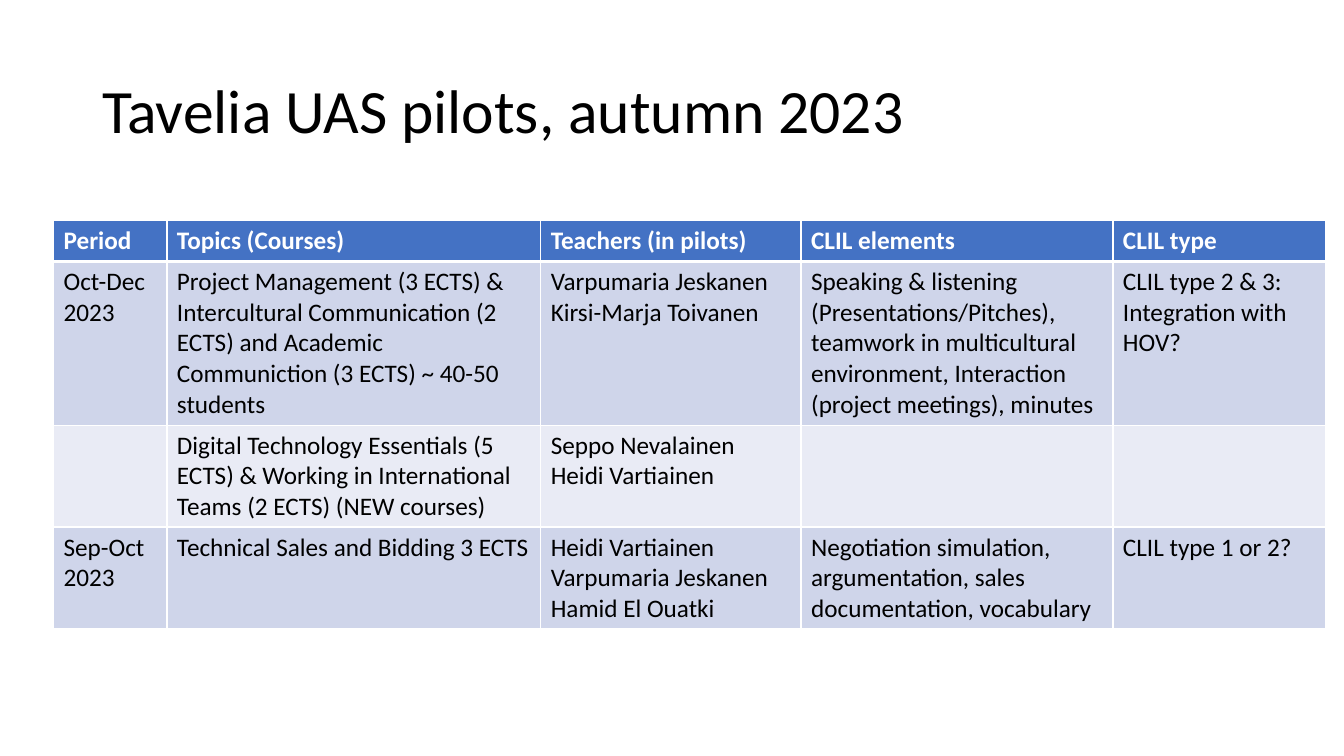
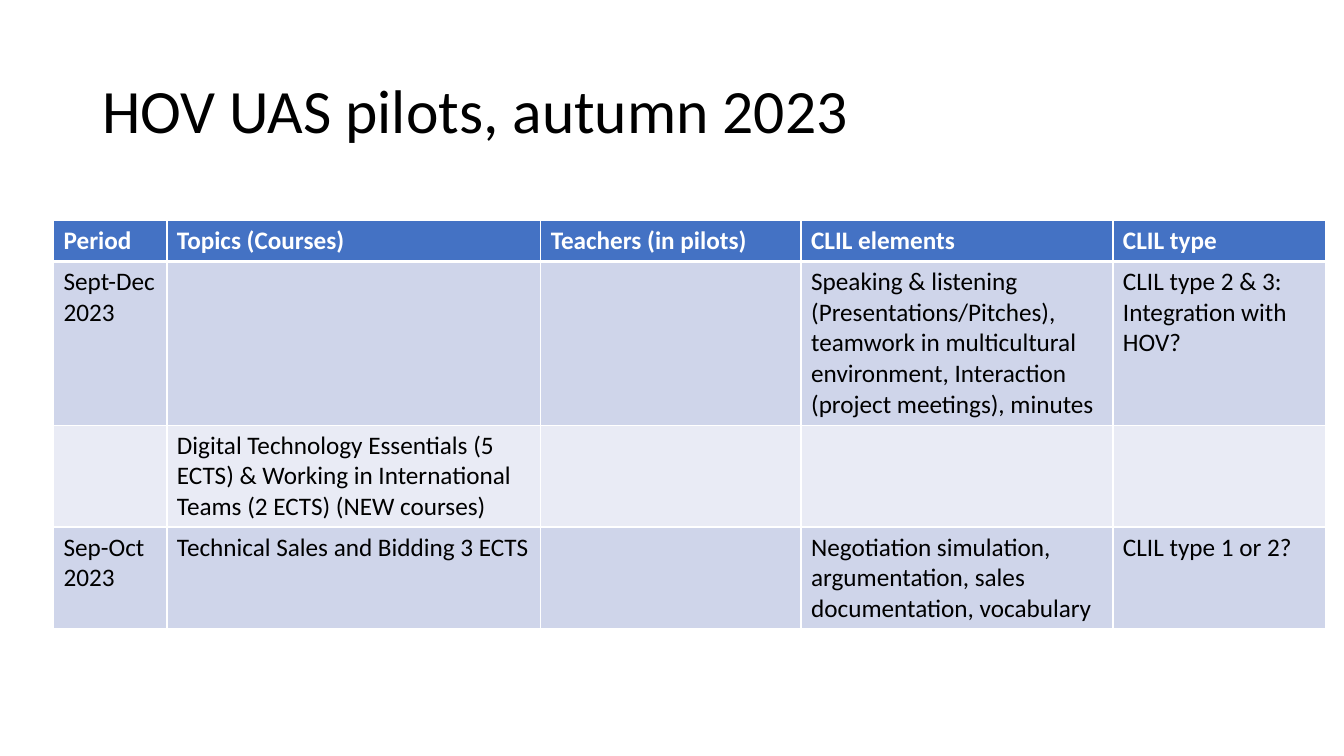
"""Build two slides that list the CLIL pilots of autumn 2023."""
from dataclasses import dataclass

from lxml import etree
from pptx import Presentation
from pptx import util as u
from pptx.dml import color
from pptx.enum import text
from pptx.oxml import ns

EMU_PER_PX = 9525


@dataclass(frozen=True)
class Theme:
    """Colours, font and type sizes shared by the slides."""
    font: str = "Calibri"
    ink: str = "000000"
    paper: str = "FFFFFF"
    header: str = "4472C4"
    bands: tuple[str, str] = ("CFD5EA", "E9EBF5")
    title_size: int = 44
    table_size: int = 18
    thin_border: int = 1
    thick_border: int = 3


@dataclass(frozen=True)
class Box:
    """A rectangle in px."""
    left: int
    top: int
    width: int
    height: int


@dataclass(frozen=True)
class Pilot:
    """One table row; each line of a field is a paragraph."""
    period: str = ""
    topics: str = ""
    teachers: str = ""
    elements: str = ""
    clil_type: str = ""

    def fields(self) -> tuple[str, ...]:
        """Return the fields in column order."""
        return self.period, self.topics, self.teachers, self.elements, self.clil_type


@dataclass(frozen=True)
class PilotSlide:
    """A title and the pilots below it."""
    title: str
    pilots: tuple[Pilot, ...]


THEME = Theme()
SLIDE_SIZE = (1280, 720)
TITLE_BOX = Box(88, 39, 1104, 139)
TABLE_LEFT, TABLE_TOP = 51, 210
COLUMN_WIDTHS = (108, 356, 248, 297, 203)
ROW_HEIGHTS = (39, 156, 97, 97)
HEADINGS = Pilot("Period", "Topics (Courses)", "Teachers (in pilots)", "CLIL elements", "CLIL type")

PROJECT_TOPICS = (
    "Project Management (3 ECTS) & Intercultural Communication (2 ECTS) "
    "and Academic Communiction (3 ECTS) ~ 40-50 students"
)
PROJECT_ELEMENTS = (
    "Speaking & listening (Presentations/Pitches), teamwork in multicultural "
    "environment, Interaction (project meetings), minutes"
)
PROJECT_TYPE = "CLIL type 2 & 3:\nIntegration with HOV?"
DIGITAL_TOPICS = (
    "Digital Technology Essentials (5 ECTS) & Working in International Teams "
    "(2 ECTS) (NEW courses)"
)
SALES_PERIOD = "Sep-Oct 2023"
SALES_TOPICS = "Technical Sales and Bidding 3 ECTS"
SALES_ELEMENTS = "Negotiation simulation, argumentation, sales documentation, vocabulary"
SALES_TYPE = "CLIL type 1 or 2?"


def pilot_slide(title: str, project_period: str, project_topics: str = "",
                teachers: tuple[str, str, str] = ("", "", "")) -> PilotSlide:
    """Combine the shared pilots with the details of one school."""
    project, digital, sales = teachers
    return PilotSlide(title, (
        Pilot(project_period, project_topics, project, PROJECT_ELEMENTS, PROJECT_TYPE),
        Pilot(topics=DIGITAL_TOPICS, teachers=digital),
        Pilot(SALES_PERIOD, SALES_TOPICS, sales, SALES_ELEMENTS, SALES_TYPE),
    ))


SLIDES = (
    pilot_slide(
        "Tavelia UAS pilots, autumn 2023", "Oct-Dec 2023", PROJECT_TOPICS,
        ("Varpumaria Jeskanen\nKirsi-Marja Toivanen",
         "Seppo Nevalainen\nHeidi Vartiainen",
         "Heidi Vartiainen\nVarpumaria Jeskanen\nHamid El Ouatki"),
    ),
    pilot_slide("HOV UAS pilots, autumn 2023", "Sept-Dec 2023"),
)


def px(length: int) -> u.Emu:
    """Turn px into EMU."""
    return u.Emu(length * EMU_PER_PX)


def add_run(paragraph, words: str, size: int, colour: str, bold: bool = False) -> None:
    """Add one formatted run to a paragraph."""
    run = paragraph.add_run()
    run.text = words
    run.font.name = THEME.font
    run.font.size = u.Pt(size)
    run.font.bold = bold
    run.font.color.rgb = color.RGBColor.from_string(colour)


def add_title(slide, words: str) -> None:
    """Add the slide title."""
    box = TITLE_BOX
    shape = slide.shapes.add_textbox(px(box.left), px(box.top), px(box.width), px(box.height))
    frame = shape.text_frame
    frame.word_wrap = True
    frame.vertical_anchor = text.MSO_ANCHOR.MIDDLE
    paragraph = frame.paragraphs[0]
    paragraph.line_spacing = 0.9
    add_run(paragraph, words, THEME.title_size, THEME.ink)


def set_borders(cell, top: int, bottom: int) -> None:
    """Draw the four borders of a cell, with widths in points."""
    properties = cell._tc.get_or_add_tcPr()
    widths = {"L": THEME.thin_border, "R": THEME.thin_border, "T": top, "B": bottom}
    for index, (side, width) in enumerate(widths.items()):
        line = etree.Element(ns.qn(f"a:ln{side}"), w=str(u.Pt(width)))
        fill = etree.SubElement(line, ns.qn("a:solidFill"))
        etree.SubElement(fill, ns.qn("a:srgbClr"), val=THEME.paper)
        properties.insert(index, line)


def fill_cell(cell, words: str, row: int) -> None:
    """Fill, border and write one cell in the style of its row."""
    is_header = row == 0
    background = THEME.header if is_header else THEME.bands[(row - 1) % 2]
    cell.fill.solid()
    cell.fill.fore_color.rgb = color.RGBColor.from_string(background)
    set_borders(
        cell,
        top=THEME.thick_border if row == 1 else THEME.thin_border,
        bottom=THEME.thick_border if is_header else THEME.thin_border,
    )
    ink = THEME.paper if is_header else THEME.ink
    frame = cell.text_frame
    for index, line in enumerate(words.splitlines()):
        paragraph = frame.add_paragraph() if index else frame.paragraphs[0]
        add_run(paragraph, line, THEME.table_size, ink, bold=is_header)


def add_pilot_table(slide, pilots: tuple[Pilot, ...]) -> None:
    """Add the table of pilots under its headings."""
    rows = (HEADINGS, *pilots)
    table = slide.shapes.add_table(
        len(rows), len(COLUMN_WIDTHS), px(TABLE_LEFT), px(TABLE_TOP),
        px(sum(COLUMN_WIDTHS)), px(sum(ROW_HEIGHTS)),
    ).table
    for column, width in zip(table.columns, COLUMN_WIDTHS):
        column.width = px(width)
    for row, (pilot, height) in enumerate(zip(rows, ROW_HEIGHTS)):
        table.rows[row].height = px(height)
        for column, words in enumerate(pilot.fields()):
            fill_cell(table.cell(row, column), words, row)


def main() -> None:
    """Build and save the presentation."""
    presentation = Presentation()
    presentation.slide_width, presentation.slide_height = map(px, SLIDE_SIZE)
    blank_layout = presentation.slide_layouts[6]
    for content in SLIDES:
        slide = presentation.slides.add_slide(blank_layout)
        add_title(slide, content.title)
        add_pilot_table(slide, content.pilots)
    presentation.save("out.pptx")


if __name__ == "__main__":
    main()
